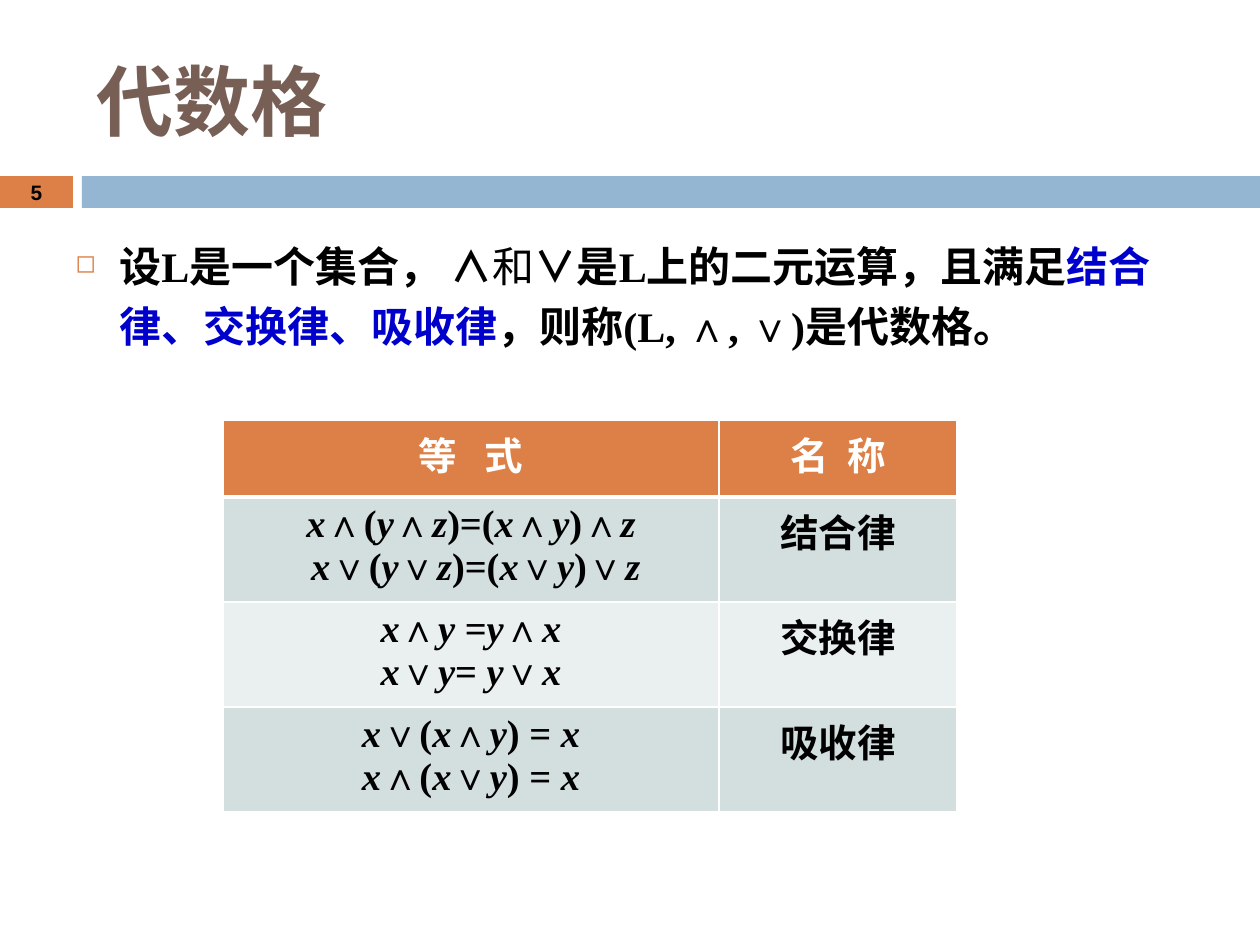
"""Build the slide that defines an algebraic lattice and tabulates its laws."""
import itertools

import pptx
import pptx.dml.color
import pptx.enum.shapes
import pptx.enum.text
import pptx.oxml
import pptx.oxml.ns
import pptx.util

RGBColor = pptx.dml.color.RGBColor
ORANGE = RGBColor(0xDD, 0x80, 0x47)
BLUE = RGBColor(0x94, 0xB6, 0xD2)
BROWN = RGBColor(0x77, 0x5F, 0x55)
LINK_BLUE = RGBColor(0x00, 0x00, 0xCC)
BLACK = RGBColor(0x00, 0x00, 0x00)
WHITE = RGBColor(0xFF, 0xFF, 0xFF)
BAND_DARK = RGBColor(0xD3, 0xDE, 0xDE)
BAND_LIGHT = RGBColor(0xEA, 0xEF, 0xEF)

PX = 914400 / 126
CENTER = pptx.enum.text.PP_ALIGN.CENTER
MIDDLE = pptx.enum.text.MSO_ANCHOR.MIDDLE
SERIF = "Times New Roman"


def px(*values):
    return [pptx.util.Emu(round(v * PX)) for v in values]


def add_run(p, text, color, size, **fmt):
    r = p.add_run()
    r.text = text
    r.font.color.rgb = color
    for key, value in {"name": SERIF, "bold": True, "size": pptx.util.Pt(size), **fmt}.items():
        setattr(r.font, key, value)
    return r


prs = pptx.Presentation()
prs.slide_width, prs.slide_height = px(1260, 945)
s = prs.slides.add_slide(prs.slide_layouts[6])

for left, width, color in [(0, 73, ORANGE), (82, 1178, BLUE)]:
    sp = s.shapes.add_shape(pptx.enum.shapes.MSO_SHAPE.RECTANGLE, *px(left, 176, width, 32))
    sp.shadow.inherit = False
    sp.fill.solid()
    sp.fill.fore_color.rgb = color
    sp.line.fill.background()

labels = [
    ("代数格", (84, 32, 1124, 136), None, BROWN, 44, "Calibri"),
    ("5", (0, 175, 73, 34), CENTER, BLACK, 11.9, "Arial"),
]
for text, box, align, color, size, font in labels:
    tf = s.shapes.add_textbox(*px(*box)).text_frame
    tf.word_wrap = True
    tf.vertical_anchor = MIDDLE
    p = tf.paragraphs[0]
    p.alignment = align
    add_run(p, text, color, size, name=font)

tf = s.shapes.add_textbox(*px(63, 224, 1123, 149)).text_frame
tf.word_wrap = True
p = tf.paragraphs[0]
for key, value in {"line_spacing": 1.2, "space_before": pptx.util.Pt(6),
                   "space_after": pptx.util.Pt(6)}.items():
    setattr(p, key, value)
pPr = p._p.get_or_add_pPr()
indent = px(44)[0]
pPr.set("marL", str(indent))
pPr.set("indent", str(-indent))
ns = pptx.oxml.ns.nsdecls("a")
for xml in (
    f'<a:buClr {ns}><a:srgbClr val="{ORANGE}"/></a:buClr>',
    f'<a:buSzPct {ns} val="60000"/>',
    f'<a:buChar {ns} char="◻"/>',
):
    pPr.append(pptx.oxml.parse_xml(xml))
for text, color, bold in [
    ("设L是一个集合， ∧", BLACK, True),
    ("和", BLACK, False),
    ("∨是L上的二元运算，且满足", BLACK, True),
    ("结合律、交换律、吸收律", LINK_BLUE, True),
    ("，则称(L, ∧, ∨)是代数格。", BLACK, True),
]:
    add_run(p, text, color, 24, bold=bold)

laws = [
    (["x∧(y∧z)=(x∧y)∧z", " x∨(y∨z)=(x∨y)∨z"], "结合律"),
    (["x∧y =y∧x", "x∨y= y∨x"], "交换律"),
    (["x∨(x∧y) = x", "x∧(x∨y) = x"], "吸收律"),
]
col_widths = px(496, 238)
row_heights = px(77, 105, 105, 105)
table = s.shapes.add_table(4, 2, *px(223, 420, 734, 392)).table
for col, width in zip(table.columns, col_widths):
    col.width = width
for row, height in zip(table.rows, row_heights):
    row.height = height

for i, row in enumerate(table.rows):
    for cell in row.cells:
        tcPr = cell._tc.get_or_add_tcPr()
        edges = {"lnL": 1, "lnR": 1, "lnT": 3 if i == 1 else 1, "lnB": 3 if i == 0 else 1}
        for edge, points in edges.items():
            tcPr.append(pptx.oxml.parse_xml(
                f'<a:{edge} {ns} w="{pptx.util.Pt(points)}"><a:solidFill>'
                f'<a:srgbClr val="{WHITE}"/></a:solidFill></a:{edge}>'))
        cell.fill.solid()
        cell.fill.fore_color.rgb = ORANGE if i == 0 else BAND_DARK if i % 2 else BAND_LIGHT

for cell, words, gap in zip(table.rows[0].cells, ("等式", "名称"), (1100, 550)):
    p = cell.text_frame.paragraphs[0]
    p.alignment = CENTER
    for text in (words[0], " ", words[1]):
        r = add_run(p, text, WHITE, 22)
        if text == " ":
            r.font._element.set("spc", str(gap))

for i, (equations, law) in enumerate(laws, start=1):
    for j, lines in enumerate((equations, [law])):
        tf = table.cell(i, j).text_frame
        for k, line in enumerate(lines):
            p = tf.add_paragraph() if k else tf.paragraphs[0]
            p.alignment = CENTER
            for is_variable, chars in itertools.groupby(line, lambda c: c in "xyz"):
                add_run(p, "".join(chars), BLACK, 22, italic=is_variable)

prs.save("out.pptx")
